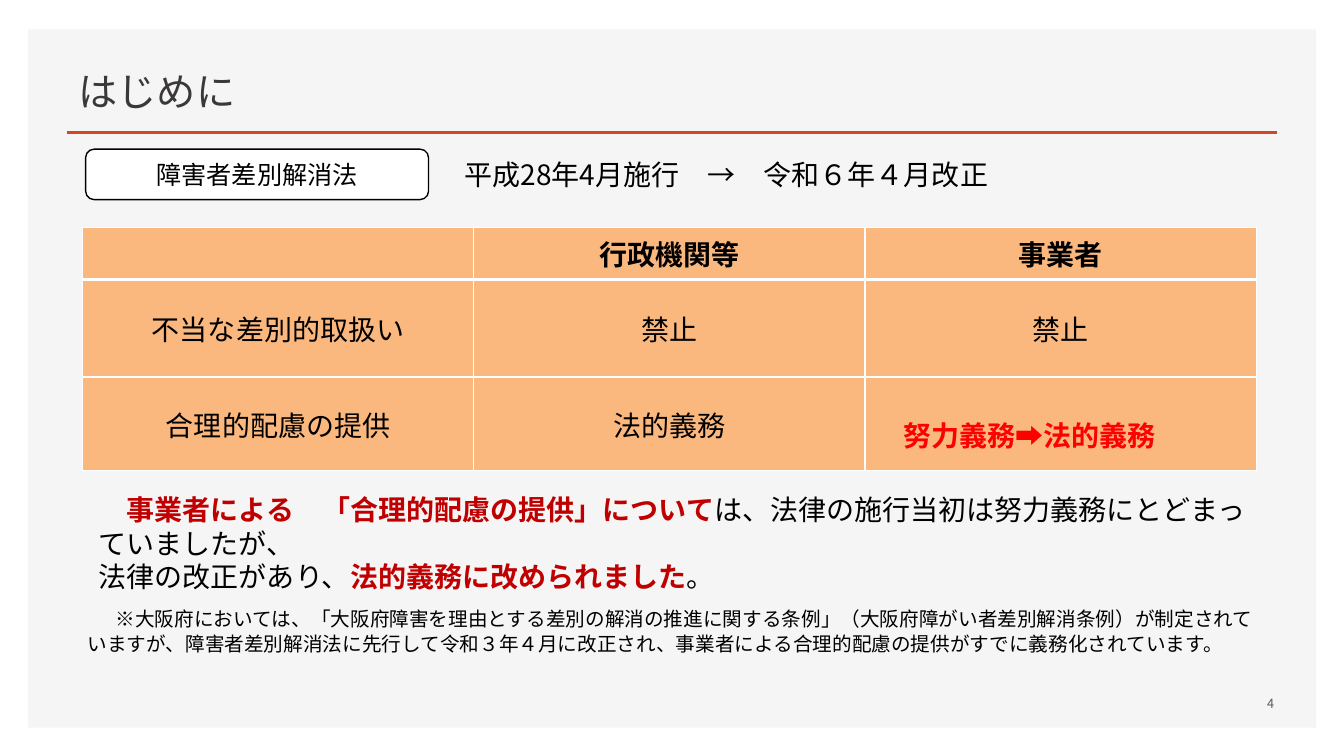
from lxml.etree import SubElement
from pptx import Presentation
from pptx.dml.color import RGBColor
from pptx.enum.shapes import MSO_CONNECTOR as CONN, MSO_SHAPE as SHAPE
from pptx.enum.text import MSO_ANCHOR as ANCHOR, PP_ALIGN as ALIGN
from pptx.oxml.ns import qn
from pptx.util import Cm, Pt

FONT = "Noto Sans CJK JP"
BLACK = RGBColor(0x00, 0x00, 0x00)
WHITE = RGBColor(0xFF, 0xFF, 0xFF)
PANEL = RGBColor(0xF5, 0xF5, 0xF5)
ACCENT = RGBColor(0xD2, 0x47, 0x26)
TITLE = RGBColor(0x3B, 0x38, 0x38)
GRAY = RGBColor(0x59, 0x59, 0x59)
ORANGE = RGBColor(0xFF, 0x9B, 0x45)
RED = RGBColor(0xFF, 0x00, 0x00)
DARK_RED = RGBColor(0xC0, 0x00, 0x00)


def write(tf, paragraphs, align=ALIGN.LEFT, spacing=None, **base):
    """Fill a text frame; each paragraph is a list of (text, format) runs."""
    for i, runs in enumerate(paragraphs):
        p = tf.paragraphs[0] if i == 0 else tf.add_paragraph()
        p.alignment = align
        p.line_spacing = spacing
        for text, own in runs:
            r = p.add_run()
            r.text = text
            fmt = {"name": FONT, "size": Pt(20), "bold": False, **base, **own}
            color = fmt.pop("color", BLACK)
            for key, value in fmt.items():
                setattr(r.font, key, value)
            r.font.color.rgb = color
            SubElement(r.font._element, qn("a:ea"), typeface=FONT)


def add_text(left, top, width, height, paragraphs, anchor=ANCHOR.TOP, **fmt):
    tf = s.shapes.add_textbox(Cm(left), Cm(top), Cm(width), Cm(height)).text_frame
    tf.word_wrap = True
    tf.vertical_anchor = anchor
    write(tf, paragraphs, **fmt)


prs = Presentation()
prs.slide_width, prs.slide_height = Cm(33.87), Cm(19.05)
s = prs.slides.add_slide(prs.slide_layouts[5])

# Title
title = s.shapes.title
place = {"left": Cm(1.73), "top": Cm(1.24), "width": Cm(16.74), "height": Cm(1.78)}
for key, value in place.items():
    setattr(title, key, value)
title.text_frame.vertical_anchor = ANCHOR.BOTTOM
write(title.text_frame, [[("はじめに", {})]], spacing=0.9, size=Pt(28), color=TITLE)

# Background panel, behind the title
panel = s.shapes.add_shape(SHAPE.RECTANGLE, Cm(0.71), Cm(0.74), Cm(32.46), Cm(17.6))
panel.shadow.inherit = False
panel.fill.solid()
panel.fill.fore_color.rgb = PANEL
panel.line.fill.background()
title._element.addprevious(panel._element)

# Title rule
rule = s.shapes.add_connector(CONN.STRAIGHT, Cm(1.68), Cm(3.33), Cm(32.18), Cm(3.33))
rule.line.color.rgb = ACCENT
rule.line.width = Pt(2)
SubElement(rule._element.spPr, qn("a:effectLst"))

# Law name and dates
law = s.shapes.add_shape(SHAPE.ROUNDED_RECTANGLE, Cm(2.16), Cm(3.76), Cm(8.64), Cm(1.27))
law.shadow.inherit = False
law.fill.solid()
law.fill.fore_color.rgb = WHITE
law.line.color.rgb = BLACK
law.line.width = Pt(1)
law.text_frame.vertical_anchor = ANCHOR.MIDDLE
write(law.text_frame, [[("障害者差別解消法", {})]], align=ALIGN.CENTER, size=Pt(18))
add_text(11.46, 3.84, 20.22, 1.12, [[("平成28年4月施行　→　令和６年４月改正", {})]])

# Duties table
rows = [
    ["", "行政機関等", "事業者"],
    ["不当な差別的取扱い", "禁止", "禁止"],
    ["合理的配慮の提供", "法的義務", "努力義務➡法的義務"],
]
heights = [1.3, 2.46, 2.36]
table = s.shapes.add_table(3, 3, Cm(2.08), Cm(5.74), Cm(29.57), Cm(sum(heights))).table
for col in table.columns:
    col.width = Cm(9.86)
for i, (texts, height) in enumerate(zip(rows, heights)):
    table.rows[i].height = Cm(height)
    for j, text in enumerate(texts):
        cell = table.cell(i, j)
        cell.vertical_anchor = ANCHOR.MIDDLE
        tcPr = cell._tc.get_or_add_tcPr()
        for side in ("lnL", "lnR", "lnT", "lnB"):
            thick = (i, side) in ((0, "lnB"), (1, "lnT"))
            ln = SubElement(tcPr, qn("a:" + side), w=str(Pt(3 if thick else 1)))
            SubElement(SubElement(ln, qn("a:solidFill")), qn("a:srgbClr"), val=str(WHITE))
        cell.fill.solid()
        cell.fill.fore_color.rgb = ORANGE
        SubElement(tcPr.find(qn("a:solidFill"))[0], qn("a:alpha"), val="67000")
        if "➡" in text:
            runs = [("　", {}), (text, {"color": RED, "bold": True})]
            write(cell.text_frame, [runs], spacing=1.5)
        elif text:
            write(cell.text_frame, [[(text, {})]], align=ALIGN.CENTER, bold=i == 0)

# Explanation
strong = {"color": DARK_RED, "bold": True}
add_text(2.24, 12.29, 30, 1.96, [
    [("　", {}),
     ("事業者による　「合理的配慮の提供」について", strong),
     ("は、法律の施行当初は努力義務にとどまっていましたが、", {})],
    [("法律の改正があり、", {}), ("法的義務に改められました", strong), ("。", {})],
])

# Note on the local ordinance
add_text(1.96, 14.96, 30, 1.7, [[
    ("　", {}),
    ("※大阪府においては、「大阪府障害を理由とする差別の解消の推進に関する条例」"
     "（大阪府障がい者差別解消条例）が制定されていますが、"
     "障害者差別解消法に先行して令和３年４月に改正され、"
     "事業者による合理的配慮の提供がすでに義務化されています。", {"size": Pt(14)}),
]])

# Page number
add_text(23.27, 17.22, 9.09, 1.02, [[("4", {})]], anchor=ANCHOR.MIDDLE,
         align=ALIGN.RIGHT, size=Pt(9), color=GRAY)

prs.save("out.pptx")
